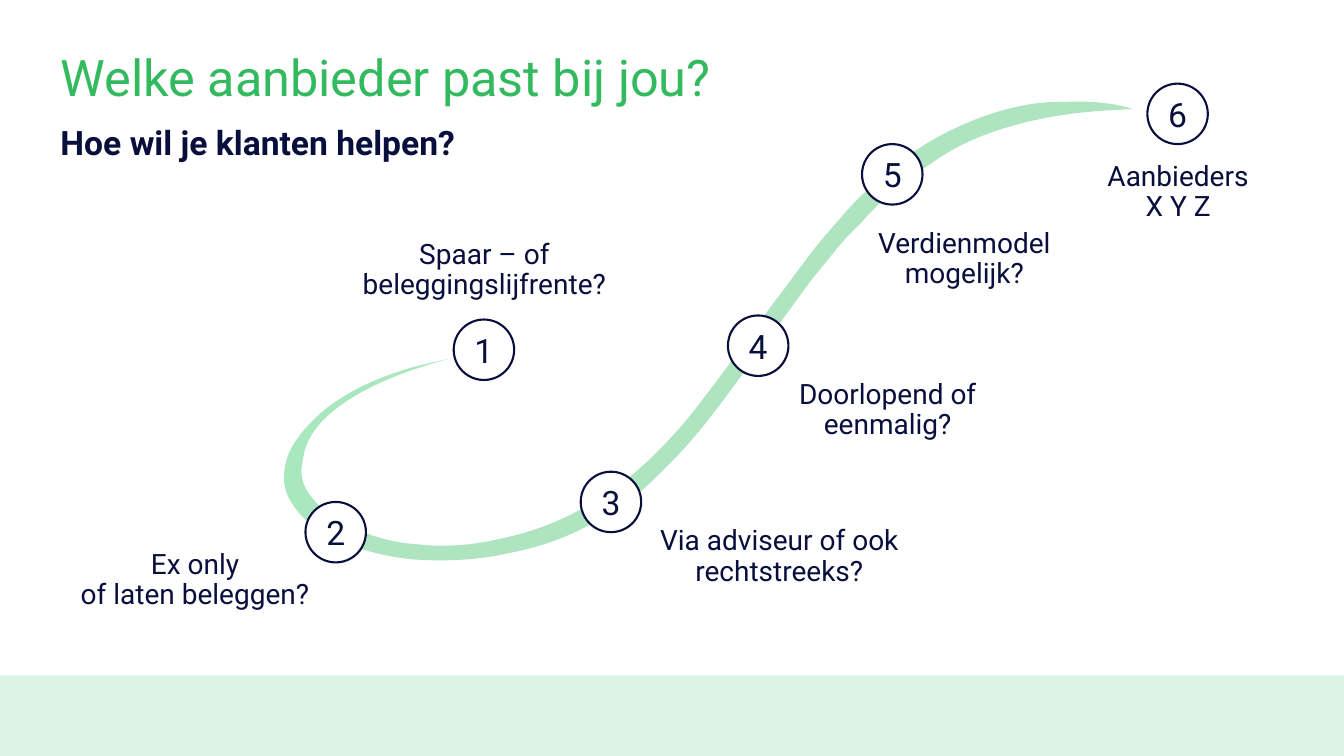
from math import cos, radians, sin

from lxml.etree import SubElement
from pptx import Presentation
from pptx.dml.color import RGBColor
from pptx.enum.shapes import MSO_SHAPE
from pptx.enum.text import MSO_ANCHOR, MSO_AUTO_SIZE, PP_ALIGN
from pptx.oxml.ns import qn
from pptx.util import Emu, Pt

SCALE = 9144
WIDE, HIGH = 1333, 750
DOT = 60
FONT = "Roboto"
COLORS = {"white": "FFFFFF", "navy": "090F3D", "green": "33BA5F",
          "band": "DDF3E5", "loop": "A9E8BE", "stem": "AFE4C0"}

LOOP = [
    (165, 0), (158, 2), (83, 23, 31, 55, 22, 92), (21, 96, 21, 98, 20, 102),
    (18, 112, 19, 121, 24, 130), (31, 142, 44, 154, 63, 164), (66, 165),
    (49, 177), (35, 169), (23, 161, 14, 151, 8, 141),
    (1, 129, 0, 116, 4, 101), (8, 86, 20, 70, 39, 53),
    (48, 45, 58, 39, 68, 33), (88, 22, 111, 13, 138, 6)]
STEM = [
    (756, 0), (780, -1, 802, 1, 821, 7), (822, 7), (806, 8),
    (732, 11, 669, 29, 629, 56), (626, 58), (624, 59, 623, 60, 622, 61),
    (606, 71, 591, 82, 576, 95), (567, 104, 559, 112, 552, 120), (538, 134),
    (525, 149, 513, 164, 501, 179), (490, 194, 475, 215, 456, 240),
    (434, 271, 415, 297, 400, 316), (385, 335, 368, 354, 349, 372),
    (331, 390, 311, 405, 289, 416), (262, 432, 233, 442, 201, 448),
    (170, 455, 138, 456, 108, 454), (77, 451, 50, 443, 27, 432),
    (17, 427, 9, 421, 2, 415), (0, 414), (17, 403),
    (24, 409, 32, 414, 41, 419), (62, 430, 85, 437, 112, 439),
    (139, 442, 167, 440, 196, 433), (225, 427, 252, 417, 278, 402),
    (286, 397, 292, 394, 296, 391), (315, 379, 332, 365, 349, 348),
    (366, 331, 382, 313, 395, 295), (409, 277, 426, 254, 447, 225),
    (450, 221, 456, 212, 467, 197), (478, 183, 488, 169, 497, 157),
    (506, 145, 515, 134, 524, 124), (530, 116, 530, 117, 537, 109),
    (543, 102, 553, 92, 567, 79), (586, 62, 605, 48, 626, 36),
    (661, 17, 695, 5, 730, 1), (739, 0, 747, 0, 756, 0)]

STEPS = [
    ((450, 317), "Spaar – of beleggingslijfrente?", (347, 238, 267, 61)),
    ((303, 498), "Ex only\vof laten beleggen?", (80, 545, 227, 61)),
    ((576, 468), "Via adviseur of ook rechtstreeks?", (644, 522, 258, 61)),
    ((722, 313), "Doorlopend of eenmalig?", (784, 377, 193, 61)),
    ((855, 143), "Verdienmodel mogelijk?", (854, 227, 205, 61)),
    ((1138, 83), "Aanbieders\vX Y Z", (1090, 160, 157, 61))]


def px(num):
    """Turn px into EMU."""
    return Emu(round(num * SCALE))


def rgb(name):
    """Look up a colour."""
    return RGBColor.from_string(COLORS[name])


def paint(shape, fill, line=None):
    """Fill and outline a shape without shadow."""
    shape.shadow.inherit = False
    shape.fill.solid()
    shape.fill.fore_color.rgb = rgb(fill)
    if line:
        shape.line.color.rgb = rgb(line)
        shape.line.width = Pt(1.5)
    else:
        shape.line.fill.background()


def write(shape, text, size, color="navy", align=PP_ALIGN.CENTER,
          anchor=MSO_ANCHOR.MIDDLE, wrap=True, space=None, bold=False):
    """Set the text of a shape in one style."""
    frame = shape.text_frame
    frame.auto_size = MSO_AUTO_SIZE.NONE
    frame.word_wrap = wrap
    frame.vertical_anchor = anchor
    frame.margin_left = frame.margin_right = 0
    frame.margin_top = frame.margin_bottom = 0
    frame.text = text
    para = frame.paragraphs[0]
    para.alignment = align
    para.line_spacing = space
    para.space_before = Pt(0)
    font = para.font
    font.name, font.size, font.bold = FONT, Pt(size), bold
    font.color.rgb = rgb(color)


def swoosh(slide, box, angle, start, parts, fill):
    """Draw a ribbon of lines and cubic curves in a turned box."""
    left, top, width, height = box
    turn = radians(angle)

    def place(x, y):
        """Return a point in the frame of the turned box."""
        x += start[0] - left - width / 2
        y += start[1] - top - height / 2
        return (px(x * cos(turn) + y * sin(turn) + width / 2),
                px(y * cos(turn) - x * sin(turn) + height / 2))

    pen = slide.shapes.build_freeform(0, 0)
    pen.add_line_segments([(px(width), px(height))], close=True)
    shape = pen.convert_to_shape()
    shape.left, shape.top, shape.width, shape.height = map(px, box)
    shape.rotation = angle
    track = next(shape.element.iter(qn("a:path")))
    track.clear()
    track.set("w", str(px(width)))
    track.set("h", str(px(height)))
    for index, part in enumerate(parts):
        tag = "a:lnTo" if len(part) == 2 else "a:cubicBezTo"
        move = SubElement(track, qn(tag if index else "a:moveTo"))
        for x, y in zip(part[::2], part[1::2]):
            across, down = place(x, y)
            SubElement(move, qn("a:pt"), x=str(across), y=str(down))
    SubElement(track, qn("a:close"))
    paint(shape, fill)


def head(slide, left, top, width):
    """Place the title and the line below it."""
    title = slide.shapes.title
    title.left, title.top = px(left), px(top)
    title.width, title.height = px(width), px(55)
    style = {"align": PP_ALIGN.LEFT, "anchor": MSO_ANCHOR.TOP}
    write(title, "Welke aanbieder past bij jou?", 36, "green",
          space=0.9, **style)
    line = slide.shapes.add_textbox(px(left), px(top + 68), px(678), px(46))
    write(line, "Hoe wil je klanten helpen?", 24, bold=True, **style)


def band(slide, left, top, width, height):
    """Draw the strip along the bottom."""
    strip = slide.shapes.add_shape(
        MSO_SHAPE.RECTANGLE, px(left), px(top), px(width), px(height))
    paint(strip, "band")


def label(slide, text, box):
    """Write the question of a step."""
    note = slide.shapes.add_textbox(*map(px, box))
    write(note, text, 20, space=0.9)


def dot(slide, left, top, num):
    """Draw a numbered circle."""
    ring = slide.shapes.add_shape(
        MSO_SHAPE.OVAL, px(left), px(top), px(DOT), px(DOT))
    paint(ring, "white", "navy")
    write(ring, str(num), 24, wrap=False)


def main():
    """Build and save the slide."""
    deck = Presentation()
    deck.slide_width, deck.slide_height = px(WIDE), px(HIGH)
    slide = deck.slides.add_slide(deck.slide_layouts[5])
    band(slide, 0, 670, WIDE, 80)
    swoosh(slide, (269, 382, 209, 109), 325.9, (280, 356), LOOP, "loop")
    swoosh(slide, (648, -114, 167, 915), 240.7, (302, 101), STEM, "stem")
    head(slide, 60, 53, 1213)
    for num, (spot, text, box) in enumerate(STEPS, 1):
        label(slide, text, box)
        dot(slide, *spot, num)
    deck.save("out.pptx")


if __name__ == "__main__":
    main()
